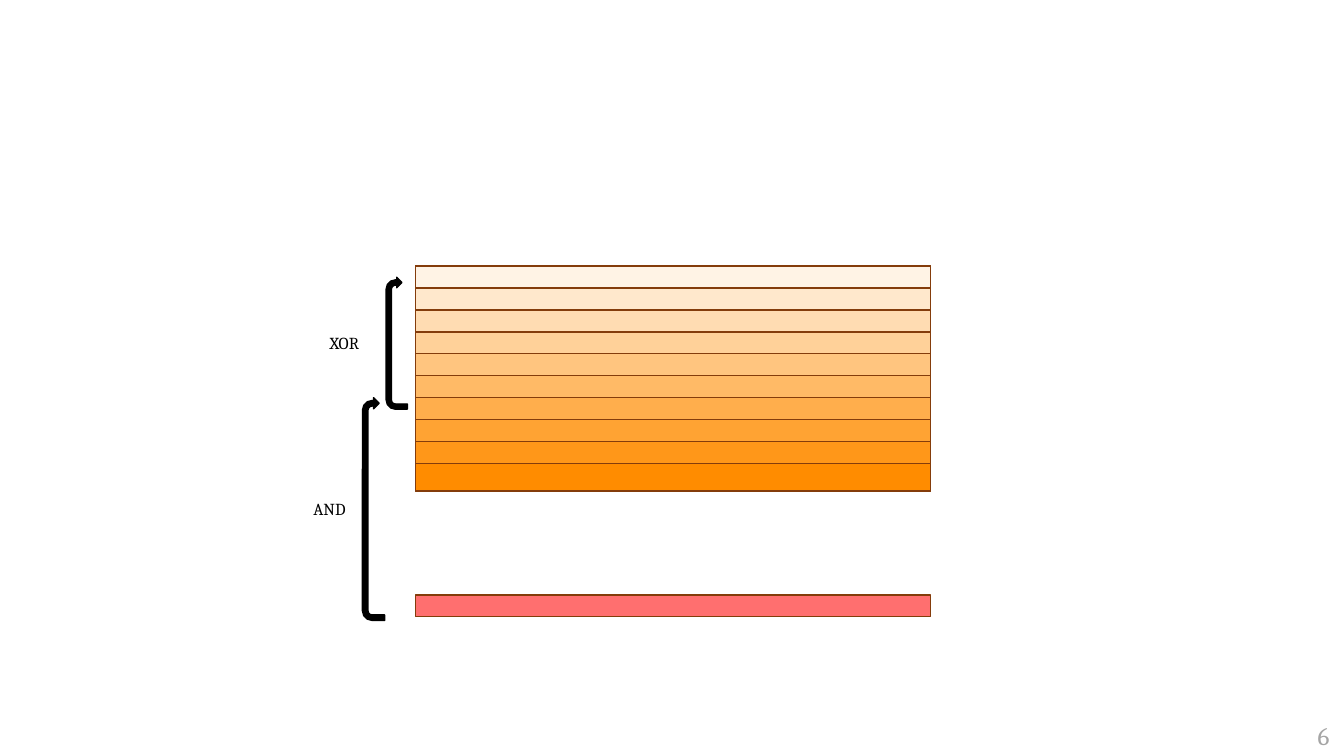
from lxml import etree
from pptx import Presentation, util as u
from pptx.dml.color import RGBColor
from pptx.enum import shapes
from pptx.oxml.ns import qn

INK = {"band": "FF8C00", "mask": "FF1414", "edge": "843C0B",
       "black": "000000", "gray": "A5A5A5"}
KIND = shapes.MSO_SHAPE

deck = Presentation()
deck.slide_width, deck.slide_height = u.Inches(13.33), u.Inches(7.5)
slide = deck.slides.add_slide(deck.slide_layouts[6])


def draw(kind, box, fill, edge, alpha=100):
    shape = slide.shapes.add_shape(kind, *map(u.Inches, box))
    shape.shadow.inherit = False
    shape.line.color.rgb = RGBColor.from_string(INK[edge])
    shape.line.width = u.Pt(1)
    if fill is None:
        shape.fill.background()
        return shape
    shape.fill.solid()
    shape.fill.fore_color.rgb = RGBColor.from_string(INK[fill])
    if alpha < 100:
        tone = shape.fill._xPr.find(".//" + qn("a:srgbClr"))
        etree.SubElement(tone, qn("a:alpha"), val=str(alpha * 1000))
    return shape


# Stack of ten rows, each ten percent denser than the one above
left, top, wide, high = 4.12, 2.64, 5.11, 2.23
pitch, count = 0.2175, 10
draw(KIND.RECTANGLE, (left, top, wide, high), None, "edge")
for row in range(count):
    drop = row * pitch
    tall = pitch if row < count - 1 else high - drop
    draw(KIND.RECTANGLE, (left, top + drop, wide, tall),
         "band", "edge", 10 * (row + 1))

# Mask row, fifteen rows below the top of the stack
draw(KIND.RECTANGLE, (left, top + 15 * pitch, wide, pitch), "mask", "edge", 61)

# Bent arrows, turned to point right
for box in ((3.28, 3.3, 1.31, 0.21), (2.6, 4.94, 2.21, 0.22)):
    draw(KIND.U_TURN_ARROW, box, "black", "black").rotation = 270

# Labels and page number
for word, box, size, tint in (
        ("XOR", (3.17, 3.25, 0.65, 0.3), 12, "black"),
        ("AND", (3.01, 4.9, 0.65, 0.3), 12, "black"),
        ("6", (12.97, 7.1, 0.36, 0.4), 18, "gray")):
    frame = slide.shapes.add_textbox(*map(u.Inches, box)).text_frame
    frame.word_wrap = True
    frame.text = word
    font = frame.paragraphs[0].runs[0].font
    font.name, font.size = "Cambria", u.Pt(size)
    font.color.rgb = RGBColor.from_string(INK[tint])

deck.save("out.pptx")
